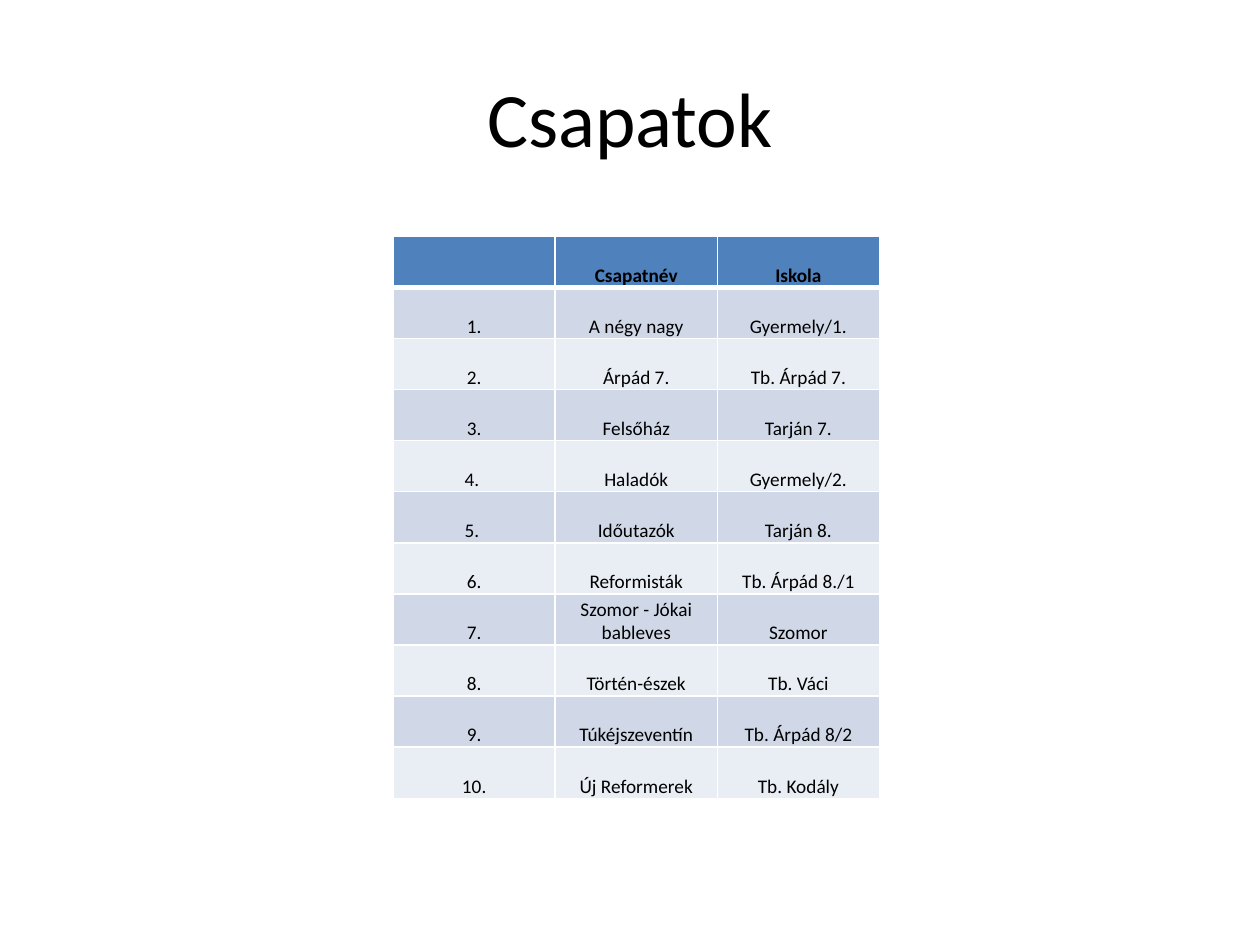
from lxml.etree import SubElement
from pptx import Presentation
from pptx.dml.color import RGBColor
from pptx.enum.text import MSO_ANCHOR as Anchor, PP_ALIGN as Align
from pptx.oxml.ns import qn
from pptx.util import Inches, Pt

BLACK = RGBColor(0x00, 0x00, 0x00)
WHITE = RGBColor(0xFF, 0xFF, 0xFF)
BLUE = RGBColor(0x4F, 0x81, 0xBD)
BAND_DARK = RGBColor(0xD0, 0xD8, 0xE8)
BAND_LIGHT = RGBColor(0xE9, 0xED, 0xF4)

HEADER = ("", "Csapatnév", "Iskola")
TEAMS = [
    ("1.", "A négy nagy", "Gyermely/1."),
    ("2.", "Árpád 7.", "Tb. Árpád 7."),
    ("3.", "Felsőház", "Tarján 7."),
    ("4. ", "Haladók", "Gyermely/2."),
    ("5. ", "Időutazók", "Tarján 8."),
    ("6.", "Reformisták", "Tb. Árpád 8./1"),
    ("7.", "Szomor - Jókai bableves", "Szomor"),
    ("8.", "Történ-észek", "Tb. Váci"),
    ("9.", "Túkéjszeventín", "Tb. Árpád 8/2"),
    ("10.", "Új Reformerek", "Tb. Kodály"),
]


class SlideBuilder:
    """Holds the style and the current slide; lengths are shares of the slide."""

    font_name = "Calibri"
    cell_format = {
        "margin_left": Inches(0.05),
        "margin_right": Inches(0.05),
        "margin_top": 0,
        "margin_bottom": 0,
        "vertical_anchor": Anchor.BOTTOM,
    }

    def __init__(self, presentation):
        self.width = presentation.slide_width
        self.height = presentation.slide_height
        self.slide = presentation.slides.add_slide(presentation.slide_layouts[6])

    def area(self, left, top, width, height):
        return (round(left * self.width), round(top * self.height),
                round(width * self.width), round(height * self.height))

    def add_text(self, paragraph, text, size, bold=False):
        paragraph.alignment = Align.CENTER
        # An empty cell still needs its size on the paragraph
        target = paragraph
        if text:
            target = paragraph.add_run()
            target.text = text
        values = {"name": self.font_name, "size": Pt(size), "bold": bold}
        for name, value in values.items():
            setattr(target.font, name, value)
        target.font.color.rgb = BLACK

    def title(self, text, *place):
        frame = self.slide.shapes.add_textbox(*self.area(*place)).text_frame
        frame.word_wrap = True
        frame.vertical_anchor = Anchor.MIDDLE
        self.add_text(frame.paragraphs[0], text, 44)

    def borders(self, cell, widths):
        properties = cell._tc.get_or_add_tcPr()
        for side, width in widths.items():
            line = SubElement(properties, qn(f"a:ln{side}"), w=str(Pt(width)))
            fill = SubElement(line, qn("a:solidFill"))
            SubElement(fill, qn("a:srgbClr"), val=str(WHITE))

    def table(self, rows, *place):
        left, top, width, height = self.area(*place)
        table = self.slide.shapes.add_table(
            len(rows), len(rows[0]), left, top, width, height).table
        for column in table.columns:
            column.width = width // len(rows[0])
        for row in table.rows:
            row.height = height // len(rows)

        for row_index, texts in enumerate(rows):
            is_header = row_index == 0
            band = BAND_DARK if row_index % 2 else BAND_LIGHT
            # A thick rule parts the header from the teams
            widths = {"L": 1, "R": 1,
                      "T": 3 if row_index == 1 else 1,
                      "B": 3 if is_header else 1}
            for column_index, text in enumerate(texts):
                cell = table.cell(row_index, column_index)
                for name, value in self.cell_format.items():
                    setattr(cell, name, value)
                self.borders(cell, widths)
                cell.fill.solid()
                cell.fill.fore_color.rgb = BLUE if is_header else band
                self.add_text(cell.text_frame.paragraphs[0], text, 11, is_header)


def main():
    presentation = Presentation()
    presentation.slide_width = Inches(10)
    presentation.slide_height = Inches(7.5)
    builder = SlideBuilder(presentation)

    # Heading
    builder.title("Csapatok", 0.05, 0.04, 0.9, 1 / 6)

    # Teams and their schools
    builder.table([HEADER, *TEAMS], 0.312, 0.25, 0.386, 0.595)

    presentation.save("out.pptx")


if __name__ == "__main__":
    main()
